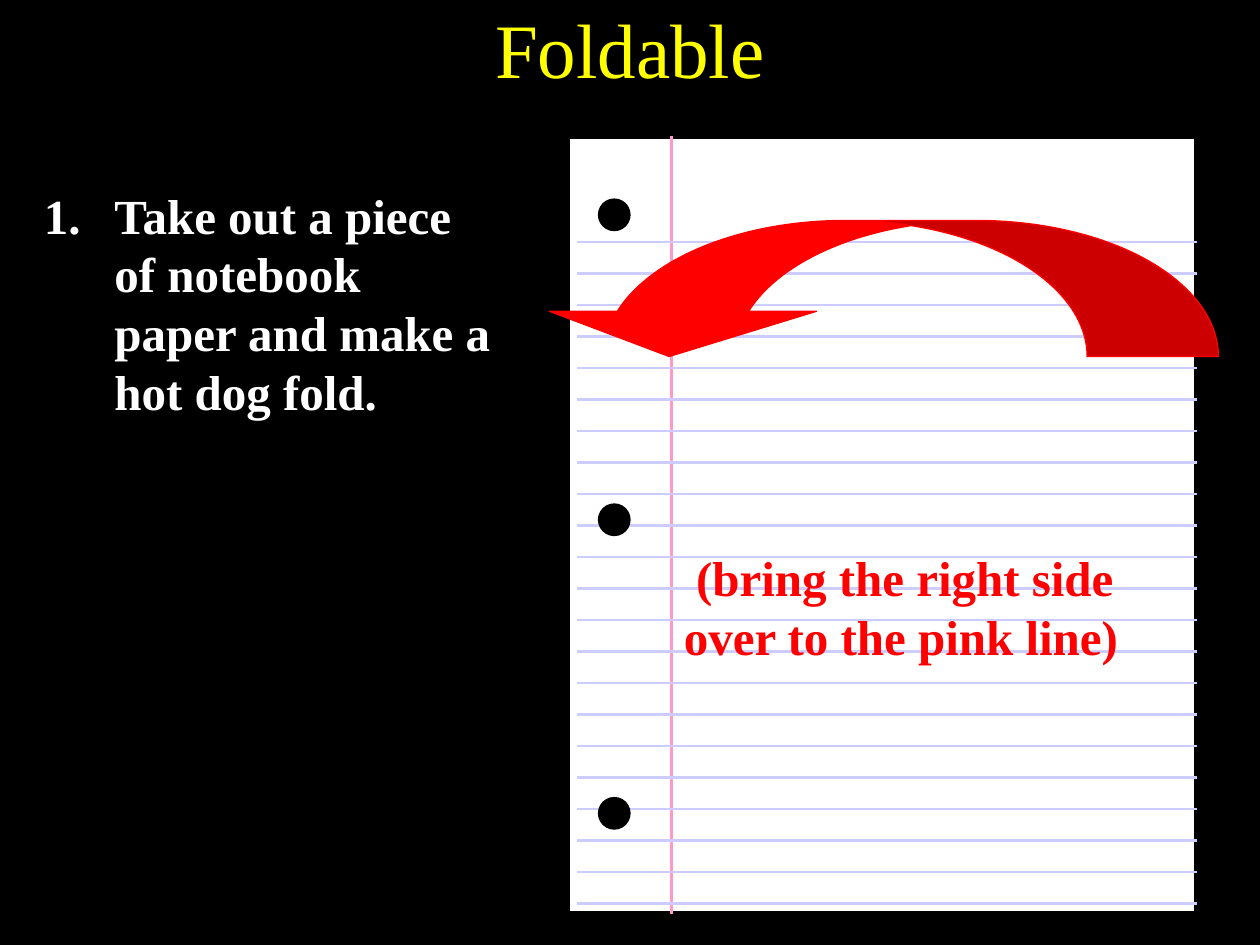
from lxml.etree import SubElement
from pptx import Presentation
from pptx.dml.color import RGBColor
from pptx.enum.shapes import MSO_CONNECTOR, MSO_SHAPE
from pptx.enum.text import MSO_ANCHOR, MSO_AUTO_SIZE, PP_ALIGN
from pptx.oxml.ns import qn
from pptx.util import Inches, Pt

INK = {"black": "000000", "white": "FFFFFF", "red": "FF0000",
       "yellow": "FFFF00", "pink": "FF99CC", "rule": "CCCCFF"}
FONT = "Times New Roman"


def tint(name):
    """Return the named colour."""
    return RGBColor.from_string(INK[name])


def add_run(para, text, size, color, bold=None):
    """Add one formatted run to a paragraph."""
    run = para.add_run()
    run.text = text
    font = run.font
    font.name, font.size, font.bold = FONT, Pt(size), bold
    font.color.rgb = tint(color)


def add_title(slide, text):
    """Place and fill the title."""
    title = slide.shapes.title
    title.left, title.top = Inches(0.75), Inches(0)
    title.width, title.height = Inches(8.5), Inches(0.75)
    frame = title.text_frame
    frame.vertical_anchor = MSO_ANCHOR.MIDDLE
    para = frame.paragraphs[0]
    para.alignment = PP_ALIGN.CENTER
    add_run(para, text, 44, color="yellow")


def add_text(slide, box, lines, color, number=False):
    """Add a bold text box with hanging paragraphs."""
    frame = slide.shapes.add_textbox(*map(Inches, box)).text_frame
    frame.word_wrap = True
    frame.auto_size = MSO_AUTO_SIZE.SHAPE_TO_FIT_TEXT
    for i, line in enumerate(lines):
        para = frame.add_paragraph() if i else frame.paragraphs[0]
        props = para._p.get_or_add_pPr()
        props.set("marL", str(Inches(0.56)))
        props.set("indent", str(Inches(-0.56)))
        if number:
            SubElement(props, qn("a:buFont"), typeface="+mj-lt")
            SubElement(props, qn("a:buAutoNum"), type="arabicPeriod")
        add_run(para, line, 28, color, bold=True)


def add_form(shapes, kind, box, fill, line, width=0.75):
    """Add a filled and outlined preset shape."""
    form = shapes.add_shape(kind, *map(Inches, box))
    form.shadow.inherit = False
    form.fill.solid()
    form.fill.fore_color.rgb = tint(fill)
    form.line.color.rgb = tint(line)
    form.line.width = Pt(width)
    return form


def add_line(shapes, ends, color):
    """Add a straight line without a shadow."""
    line = shapes.add_connector(MSO_CONNECTOR.STRAIGHT, *map(Inches, ends))
    line.line.color.rgb = tint(color)
    line.line.width = Pt(1.5)
    SubElement(line._element.spPr, qn("a:effectLst"))


def add_paper(slide):
    """Draw the ruled and punched sheet as one group."""
    shapes = slide.shapes.add_group_shape().shapes
    add_form(shapes, MSO_SHAPE.RECTANGLE, (4.5, 1.08, 5, 6.17),
             "white", "black", width=3)
    add_line(shapes, (5.33, 1.08, 5.33, 7.25), "pink")
    for i in range(22):
        y = 1.92 + 0.25 * i
        add_line(shapes, (4.58, y, 9.5, y), "rule")
    for y in (1.58, 4, 6.33):
        add_form(shapes, MSO_SHAPE.OVAL, (4.75, y, 0.25, 0.25),
                 "black", "black")


def add_arrow(slide):
    """Add the fold arrow, flipped both ways."""
    arrow = add_form(slide.shapes, MSO_SHAPE.CURVED_UP_ARROW,
                     (4.25, 1.75, 5.42, 1.08), "red", "red")
    for i, value in enumerate((0.965, 1.965, 0.333)):
        arrow.adjustments[i] = value
    frame = arrow._element.spPr.xfrm
    frame.set("flipH", "1")
    frame.set("flipV", "1")


def main():
    """Build and save the slide."""
    deck = Presentation()
    deck.slide_width, deck.slide_height = Inches(10), Inches(7.5)
    slide = deck.slides.add_slide(deck.slide_layouts[5])
    slide.background.fill.solid()
    slide.background.fill.fore_color.rgb = tint("black")
    add_title(slide, "Foldable")
    step = "Take out a piece of notebook paper and make a hot dog fold."
    add_text(slide, (0.25, 1.42, 3.75, 1.99), [step], "white", number=True)
    add_paper(slide)
    add_arrow(slide)
    hint = [" (bring the right side", "over to the pink line)"]
    add_text(slide, (5.33, 4.3, 3.75, 1.04), hint, "red")
    deck.save("out.pptx")


if __name__ == "__main__":
    main()
